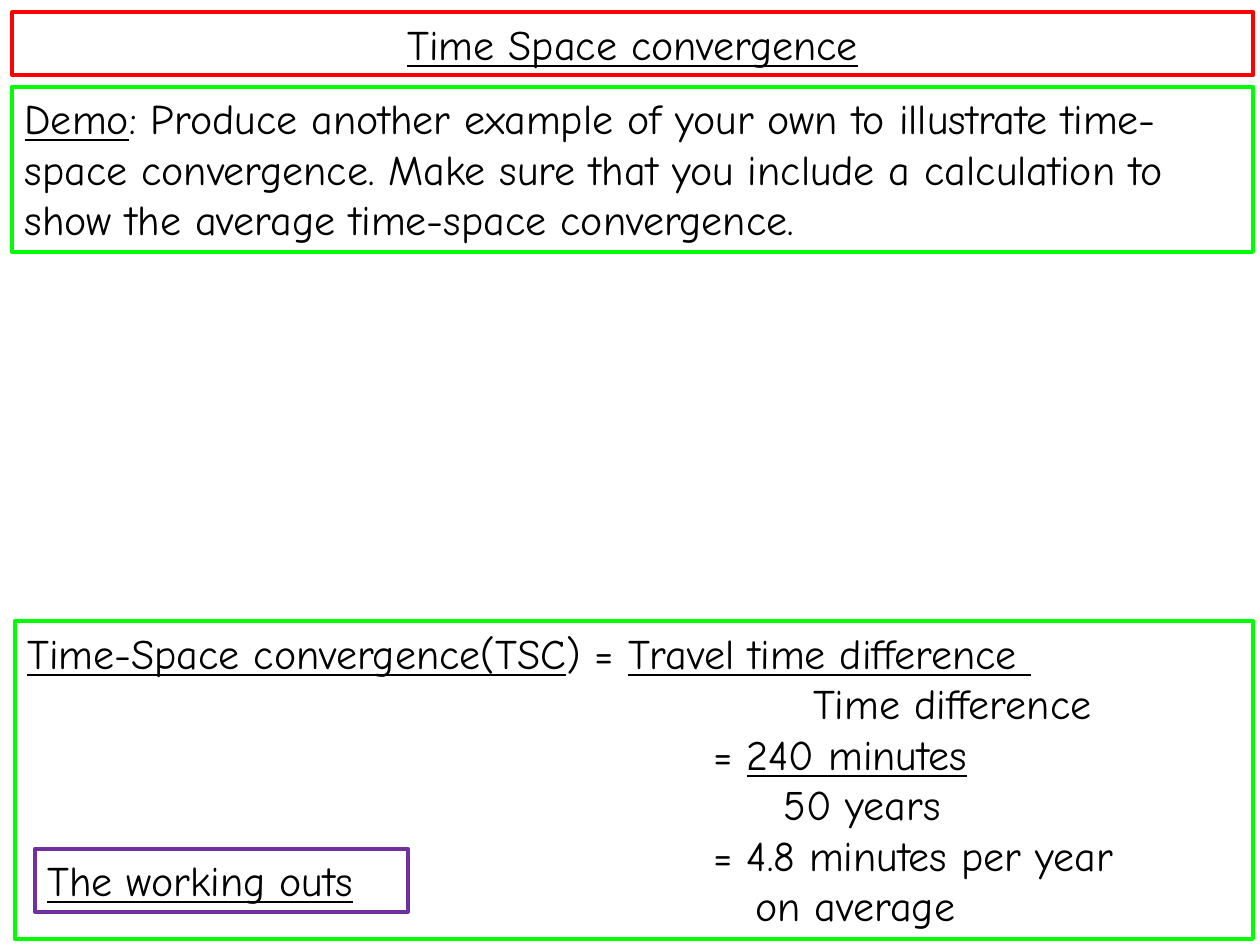
from pptx import Presentation
from pptx.dml.color import RGBColor
from pptx.enum import shapes, text
from pptx.util import Pt


def color(code):
    return RGBColor.from_string(code)


def write(para, words, font="Comic Neue", size=24, ink="000000", under=False):
    run = para.add_run()
    run.text = words
    run.font.name = font
    run.font.size = Pt(size)
    run.font.color.rgb = color(ink)
    run.font.underline = under


class Page:
    def __init__(self, slide, width=2.25):
        self.slide = slide
        self.width = width

    def box(self, left, top, wide, high, edge, lines, align=text.PP_ALIGN.LEFT):
        """Draw a framed box; each line is (indent, [(words, underlined), ...])."""
        shape = self.slide.shapes.add_shape(
            shapes.MSO_SHAPE.RECTANGLE, Pt(left), Pt(top), Pt(wide), Pt(high))
        shape.shadow.inherit = False
        shape.fill.background()
        shape.line.color.rgb = color(edge)
        shape.line.width = Pt(self.width)
        frame = shape.text_frame
        frame.word_wrap = True
        frame.auto_size = text.MSO_AUTO_SIZE.SHAPE_TO_FIT_TEXT
        frame.vertical_anchor = text.MSO_ANCHOR.TOP
        for i, (indent, parts) in enumerate(lines):
            para = frame.add_paragraph() if i else frame.paragraphs[0]
            para.alignment = align
            if indent:
                props = para._p.get_or_add_pPr()
                props.set("marL", str(Pt(indent)))
                props.set("indent", "0")
            for words, under in parts:
                write(para, words, under=under)


def main():
    deck = Presentation()
    deck.slide_width, deck.slide_height = Pt(720), Pt(540)
    page = Page(deck.slides.add_slide(deck.slide_layouts[6]))

    red, green, purple = "FF0000", "00FF00", "7030A0"
    page.box(7, 7, 709, 36, red, [(0, [("Time Space convergence", True)])],
             align=text.PP_ALIGN.CENTER)
    page.box(7, 49.5, 709, 94.5, green, [(0, [
        ("Demo", True),
        (": Produce another example of your own to illustrate time-space "
         "convergence. Make sure that you include a calculation to show the "
         "average time-space convergence.", False)])])

    equals = 392
    page.box(8.5, 355, 707.5, 181.5, green, [
        (0, [("Time-Space convergence(TSC", True), (") = ", False),
             ("Travel time difference ", True)]),
        (449, [("Time difference", False)]),
        (equals, [("= ", False), ("240 minutes", True)]),
        (432, [("50 years", False)]),
        (equals, [("= 4.8 minutes per year", False)]),
        (416, [("on average", False)])])
    page.box(20, 485, 213, 36, purple, [(0, [("The working outs", True)])])
    deck.save("out.pptx")


if __name__ == "__main__":
    main()
